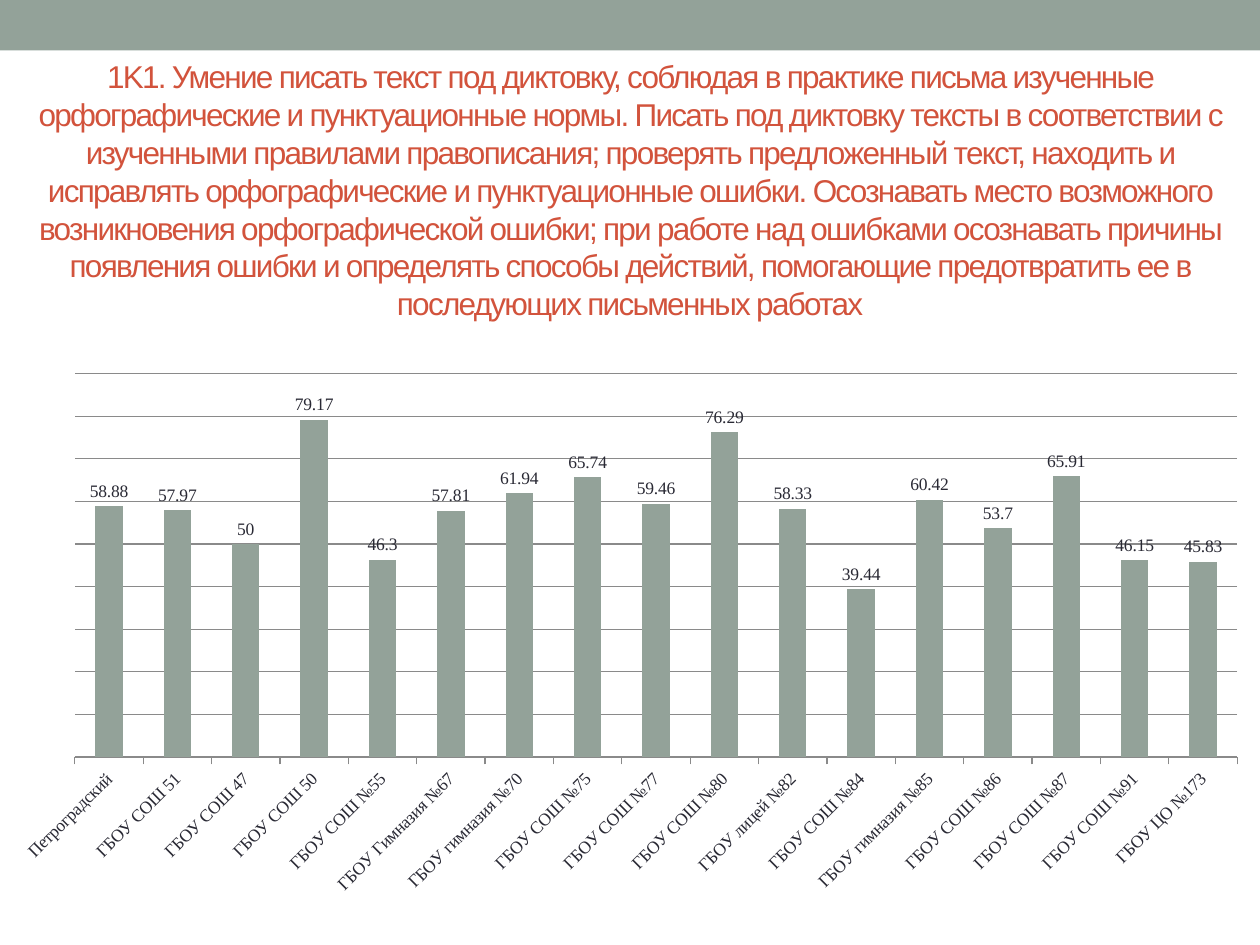
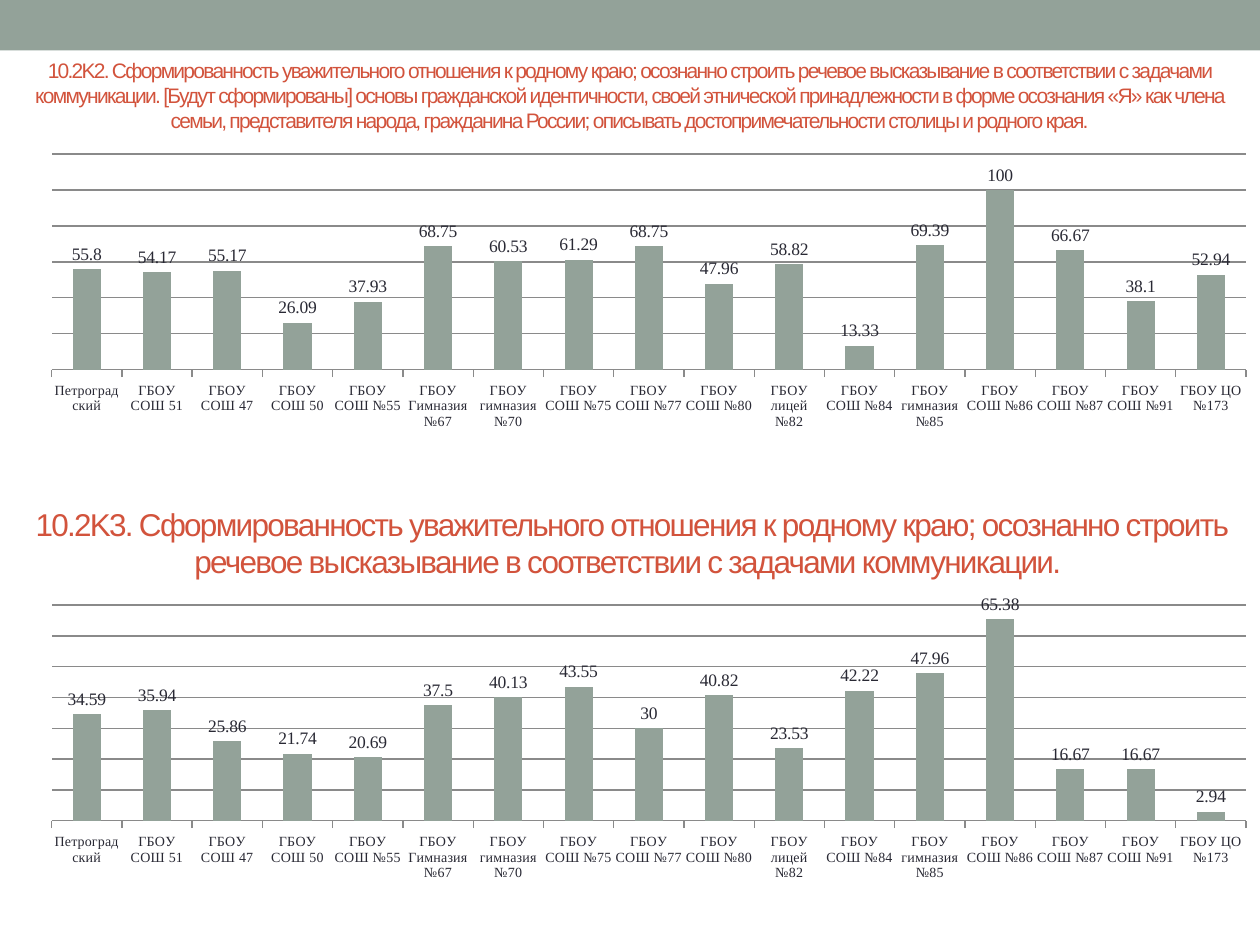
from pptx import Presentation
from pptx.chart.data import CategoryChartData
from pptx.dml.color import RGBColor
from pptx.enum.chart import XL_CHART_TYPE as ChartType, XL_LABEL_POSITION as LabelPosition
from pptx.enum.chart import XL_TICK_MARK as TickMark
from pptx.enum.shapes import MSO_SHAPE as Preset, PP_PLACEHOLDER as Placeholder
from pptx.enum.text import MSO_ANCHOR as Anchor, MSO_AUTO_SIZE as AutoSize, PP_ALIGN as Align
from pptx.oxml import parse_xml
from pptx.oxml.ns import nsdecls
from pptx.util import Inches, Pt

SAGE = RGBColor(0x93, 0xA2, 0x99)
RUST = RGBColor(0xD2, 0x53, 0x3C)
INK = RGBColor(0x29, 0x29, 0x34)
GRID = RGBColor(0x8A, 0x8A, 0x8A)

WIDTH, HEIGHT = Inches(10), Inches(7.5)
FOOTERS = (Placeholder.DATE, Placeholder.FOOTER, Placeholder.SLIDE_NUMBER)
TITLE_FRAME = dict(word_wrap=True, auto_size=AutoSize.NONE, vertical_anchor=Anchor.MIDDLE)
TITLE_PARAGRAPH = dict(alignment=Align.CENTER, line_spacing=1.0)
PLOT = dict(x=0.041, y=0.054, w=0.948, h=0.605)

SCHOOLS = [
    "Петроградский", "ГБОУ СОШ 51", "ГБОУ СОШ 47", "ГБОУ СОШ 50", "ГБОУ СОШ №55",
    "ГБОУ Гимназия №67", "ГБОУ гимназия №70", "ГБОУ СОШ №75", "ГБОУ СОШ №77",
    "ГБОУ СОШ №80", "ГБОУ лицей №82", "ГБОУ СОШ №84", "ГБОУ гимназия №85",
    "ГБОУ СОШ №86", "ГБОУ СОШ №87", "ГБОУ СОШ №91", "ГБОУ ЦО №173",
]

SLIDES = [
    [
        dict(
            title="1K1. Умение писать текст под диктовку, соблюдая в практике письма изученные "
                  "орфографические и пунктуационные нормы. Писать под диктовку тексты в соответствии "
                  "с изученными правилами правописания; проверять предложенный текст, находить и "
                  "исправлять орфографические и пунктуационные ошибки. Осознавать место возможного "
                  "возникновения орфографической ошибки; при работе над ошибками осознавать причины "
                  "появления ошибки и определять способы действий, помогающие предотвратить ее в "
                  "последующих письменных работах",
            size=18, title_rows=(0.44, 2.13), chart_columns=(-0.01, 10.03), chart_rows=(2.88, 4.3),
            label_size=10, top=90, step=10, plot=None,
            values=[58.88, 57.97, 50, 79.17, 46.3, 57.81, 61.94, 65.74, 59.46, 76.29,
                    58.33, 39.44, 60.42, 53.7, 65.91, 46.15, 45.83],
        ),
    ],
    [
        dict(
            title="10.2K2. Сформированность уважительного отношения к родному краю; осознанно строить "
                  "речевое высказывание в соответствии с задачами коммуникации. [Будут сформированы] "
                  "основы гражданской идентичности, своей этнической принадлежности в форме осознания "
                  "«Я» как члена семьи, представителя народа, гражданина России; описывать "
                  "достопримечательности столицы и родного края.",
            size=12, title_rows=(0.36, 0.79), chart_columns=(0, 10), chart_rows=(1.07, 2.83),
            label_size=8, top=120, step=20, plot=PLOT,
            values=[55.8, 54.17, 55.17, 26.09, 37.93, 68.75, 60.53, 61.29, 68.75, 47.96,
                    58.82, 13.33, 69.39, 100, 66.67, 38.1, 52.94],
        ),
        dict(
            title="10.2K3. Сформированность уважительного отношения к родному краю; осознанно строить "
                  "речевое высказывание в соответствии с задачами коммуникации. ",
            size=18, title_rows=(3.91, 0.79), chart_columns=(0, 10), chart_rows=(4.65, 2.83),
            label_size=8, top=70, step=10, plot=PLOT,
            values=[34.59, 35.94, 25.86, 21.74, 20.69, 37.5, 40.13, 43.55, 30, 40.82,
                    23.53, 42.22, 47.96, 65.38, 16.67, 16.67, 2.94],
        ),
    ],
]


def apply_format(target, values):
    for name, value in values.items():
        setattr(target, name, value)


def add_result_chart(slide, result):
    data = CategoryChartData()
    data.categories = SCHOOLS
    data.add_series("Series 1", result["values"])
    left, width = map(Inches, result["chart_columns"])
    top, height = map(Inches, result["chart_rows"])
    chart = slide.shapes.add_chart(ChartType.COLUMN_CLUSTERED, left, top, width, height, data).chart
    apply_format(chart, dict(has_legend=False, has_title=False))
    apply_format(chart.font, dict(name="Times New Roman", size=Pt(10)))
    chart.font.color.rgb = INK

    plot = chart.plots[0]
    apply_format(plot, dict(gap_width=150, vary_by_categories=False, has_data_labels=True))
    apply_format(plot.data_labels, dict(show_value=True, position=LabelPosition.OUTSIDE_END))
    fill = plot.series[0].format.fill
    fill.solid()
    fill.fore_color.rgb = SAGE

    schools, scores = chart.category_axis, chart.value_axis
    schools.major_tick_mark = TickMark.OUTSIDE
    schools.tick_labels.font.size = Pt(result["label_size"])
    apply_format(scores, dict(visible=False, has_major_gridlines=True, minimum_scale=0,
                              maximum_scale=result["top"], major_unit=result["step"]))
    for line in (schools.format.line, scores.major_gridlines.format.line):
        line.color.rgb = GRID
        line.width = Pt(0.75)

    if result["plot"]:
        shares = "".join(f'<c:{side} val="{share}"/>' for side, share in result["plot"].items())
        layout = parse_xml(
            f'<c:layout {nsdecls("c")}><c:manualLayout><c:layoutTarget val="inner"/>'
            f'<c:xMode val="edge"/><c:yMode val="edge"/>{shares}</c:manualLayout></c:layout>')
        area = chart.element.chart.plotArea
        for default in area.findall(layout.tag):
            area.remove(default)
        area.insert(0, layout)


presentation = Presentation()
apply_format(presentation, dict(slide_width=WIDTH, slide_height=HEIGHT))
master = presentation.slide_master
title_only = presentation.slide_layouts[5]

for layout in list(presentation.slide_layouts):
    if layout.name != title_only.name:
        presentation.slide_layouts.remove(layout)
for template in (master, title_only):
    for placeholder in list(template.placeholders):
        if placeholder.placeholder_format.type in FOOTERS:
            template.shapes.element.remove(placeholder.element)

for number, results in enumerate(SLIDES):
    slide = presentation.slides.add_slide(title_only)
    if number == 0:
        band = slide.shapes.add_shape(Preset.RECTANGLE, 0, 0, WIDTH, Inches(0.4))
        band.shadow.inherit = False
        band.fill.solid()
        band.fill.fore_color.rgb = SAGE
        band.line.fill.background()
        master.shapes.element.insert(2, band.element)

    for position, result in enumerate(results):
        top, height = map(Inches, result["title_rows"])
        if position == 0:
            title = slide.shapes.title
            apply_format(title, dict(left=0, top=top, width=WIDTH, height=height))
        else:
            title = slide.shapes.add_textbox(Inches(0.01), top, WIDTH, height)
        apply_format(title.text_frame, TITLE_FRAME)
        paragraph = title.text_frame.paragraphs[0]
        apply_format(paragraph, TITLE_PARAGRAPH)
        run = paragraph.add_run()
        run.text = result["title"]
        apply_format(run.font, dict(name="Arial", size=Pt(result["size"])))
        run.font.color.rgb = RUST
        run.font._element.set("spc", "-100")
        add_result_chart(slide, result)

presentation.save("out.pptx")
